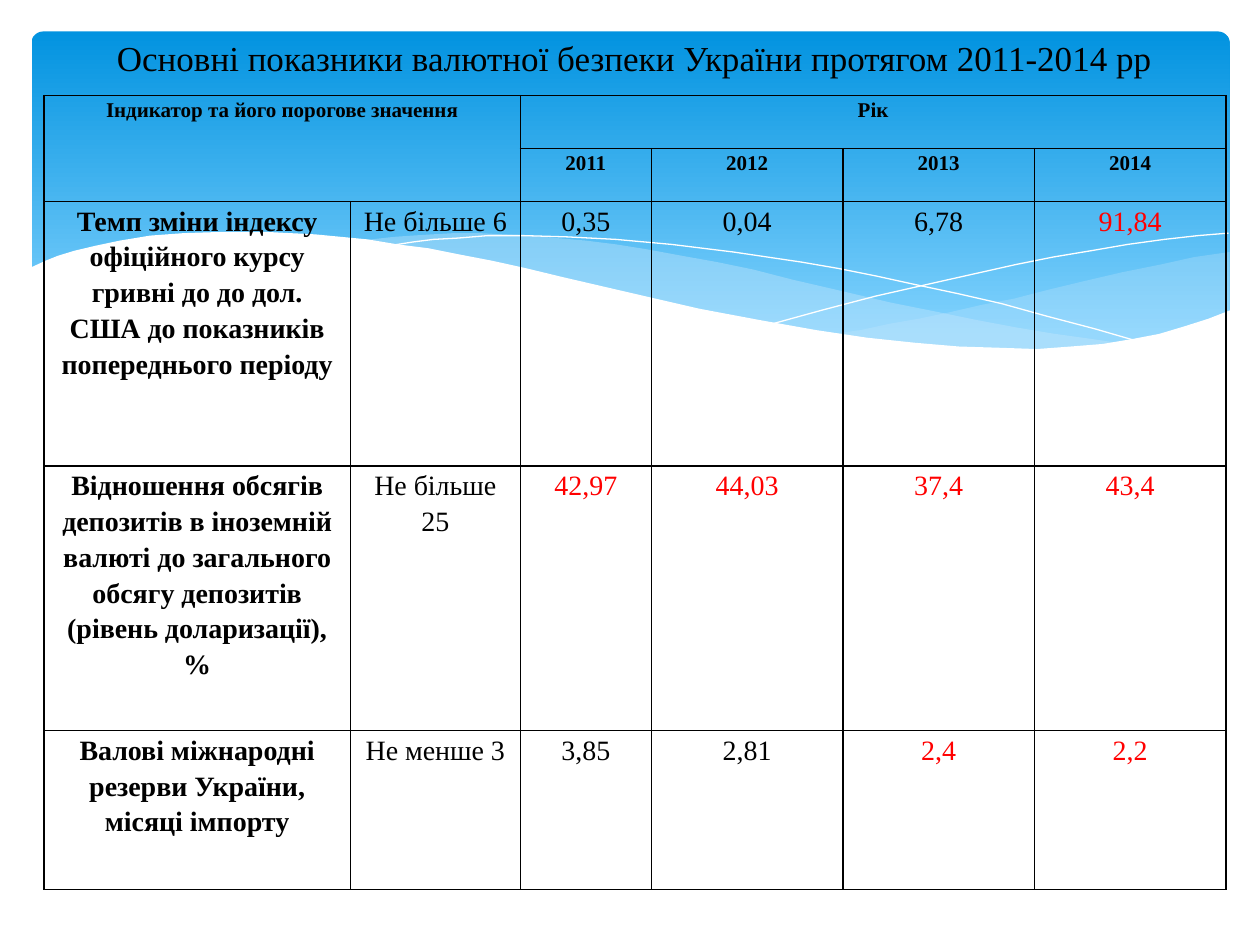
from dataclasses import dataclass

from lxml import etree
from pptx import Presentation
from pptx.dml.color import RGBColor
from pptx.enum.shapes import MSO_SHAPE
from pptx.enum.text import MSO_ANCHOR, PP_ALIGN
from pptx.oxml.ns import qn
from pptx.util import Inches, Pt

ROUNDED = MSO_SHAPE.ROUNDED_RECTANGLE
MIDDLE = MSO_ANCHOR.MIDDLE
CENTER = PP_ALIGN.CENTER


@dataclass(frozen=True)
class Theme:
    font: str = "Times New Roman"
    black: RGBColor = RGBColor(0, 0, 0)
    red: RGBColor = RGBColor(0xFF, 0, 0)
    white: RGBColor = RGBColor(0xFF, 0xFF, 0xFF)
    sky_top: RGBColor = RGBColor(0x02, 0x93, 0xE0)
    sky_bottom: RGBColor = RGBColor(0x83, 0xD3, 0xFE)
    mist: RGBColor = RGBColor(0xC6, 0xE7, 0xFC)
    title_size: int = 20
    head_size: int = 12
    body_size: int = 16


THEME = Theme()


def add_span(para, text, size, color=THEME.black, bold=False):
    para.alignment = CENTER
    span = para.add_run()
    span.text = text
    span.font.name = THEME.font
    span.font.size = Pt(size)
    span.font.bold = bold
    span.font.color.rgb = color


def add_curve(page, points, closed):
    corners = [(Inches(x), Inches(y)) for x, y in points]
    builder = page.shapes.build_freeform(*corners[0])
    builder.add_line_segments(corners[1:], close=closed)
    curve = builder.convert_to_shape()
    curve.shadow.inherit = False
    return curve


deck = Presentation()
deck.slide_width, deck.slide_height = Inches(10), Inches(7.5)
page = deck.slides.add_slide(deck.slide_layouts[6])

# Sky panel
sky = page.shapes.add_shape(ROUNDED, Inches(0.25), Inches(0.25), Inches(9.51), Inches(2.7))
sky.adjustments[0] = 0.034
sky.shadow.inherit = False
sky.line.fill.background()
sky.fill.gradient()
sky.fill.gradient_angle = 270
for stop, color, position in zip(
    sky.fill.gradient_stops, (THEME.sky_top, THEME.sky_bottom), (0, 0.9)
):
    stop.color.rgb = color
    stop.position = position

# Waves: outline and opacity in percent
right_wave = [
    (9.76, 2), (9.48, 2.04), (9.21, 2.1), (8.91, 2.16), (8.61, 2.23), (8.32, 2.3),
    (8.05, 2.37), (7.79, 2.42), (7.53, 2.48), (7.29, 2.53), (7.06, 2.57), (6.83, 2.62),
    (6.61, 2.65), (6.91, 2.69), (7.19, 2.72), (7.45, 2.75), (7.69, 2.77), (8.03, 2.78),
    (8.35, 2.77), (8.63, 2.75), (8.89, 2.72), (9.13, 2.67), (9.35, 2.62), (9.49, 2.57),
    (9.63, 2.52), (9.76, 2.47),
]
middle_wave = [
    (8.93, 2.73), (8.66, 2.69), (8.37, 2.65), (8.07, 2.6), (7.75, 2.54), (7.41, 2.47),
    (7.06, 2.4), (6.68, 2.31), (6.29, 2.22), (5.98, 2.14), (5.69, 2.08), (5.41, 2.03),
    (5.14, 1.98), (4.89, 1.94), (4.65, 1.91), (4.42, 1.89), (4.2, 1.87), (3.99, 1.86),
    (3.8, 1.85), (3.61, 1.85), (3.44, 1.86), (3.28, 1.87), (3.13, 1.88), (2.86, 1.91),
    (3.23, 1.96), (3.62, 2.03), (4.04, 2.11), (4.49, 2.22), (4.91, 2.32), (5.3, 2.4),
    (5.66, 2.48), (6.01, 2.55), (6.34, 2.61), (6.65, 2.66), (6.95, 2.7), (7.22, 2.74),
    (7.48, 2.76), (7.73, 2.77), (7.96, 2.78), (8.28, 2.78), (8.57, 2.77), (8.76, 2.75),
]
white_wave = [
    (9.77, 2.46), (9.59, 2.53), (9.4, 2.59), (9.2, 2.65), (8.99, 2.69), (8.75, 2.73),
    (8.5, 2.75), (8.23, 2.77), (7.93, 2.76), (7.61, 2.75), (7.26, 2.72), (6.88, 2.68),
    (6.48, 2.62), (6.03, 2.54), (5.55, 2.45), (5.03, 2.33), (4.47, 2.2), (4.18, 2.13),
    (3.91, 2.07), (3.65, 2.02), (3.4, 1.97), (3.16, 1.94), (2.92, 1.9), (2.71, 1.88),
    (2.5, 1.86), (2.3, 1.85), (2.11, 1.84), (1.77, 1.84), (1.46, 1.85), (1.19, 1.87),
    (0.95, 1.91), (0.76, 1.95), (0.59, 1.99), (0.46, 2.03), (0.36, 2.07), (0.23, 2.13),
    (0.23, 3.29), (9.77, 3.29),
]
falling_line = [
    (3.09, 1.95), (3.28, 1.92), (3.44, 1.9), (3.63, 1.89), (3.87, 1.87), (4.16, 1.87),
    (4.5, 1.88), (4.89, 1.9), (5.33, 1.94), (5.82, 2), (6.36, 2.08), (6.65, 2.13),
    (6.95, 2.19), (7.27, 2.26), (7.6, 2.33), (7.95, 2.41), (8.31, 2.51), (8.69, 2.61),
    (9.07, 2.72),
]
rising_line = [
    (6.13, 2.57), (6.53, 2.46), (6.95, 2.35), (7.48, 2.23), (8.06, 2.1), (8.36, 2.04),
    (8.66, 1.99), (8.95, 1.94), (9.24, 1.9), (9.51, 1.87), (9.75, 1.85),
]

for outline, opacity in ((right_wave, 29), (middle_wave, 40)):
    wave = add_curve(page, outline, True)
    wave.line.fill.background()
    wave.fill.solid()
    wave.fill.fore_color.rgb = THEME.mist
    tint = wave.fill._xPr.find(qn("a:solidFill"))[0]
    etree.SubElement(tint, qn("a:alpha"), val=str(opacity * 1000))

for points in (falling_line, rising_line):
    curve = add_curve(page, points, False)
    curve.fill.background()
    curve.line.color.rgb = THEME.white
    curve.line.width = Pt(0)

wave = add_curve(page, white_wave, True)
wave.line.fill.background()
wave.fill.solid()
wave.fill.fore_color.rgb = THEME.white

# Indicator table: values outside their threshold are red
column_widths = (2.43, 1.35, 1.04, 1.52, 1.52, 1.52)
row_heights = (0.42, 0.42, 2.1, 2.1, 1.26)
rows = [
    ("Індикатор та його порогове значення", "", "Рік", "", "", ""),
    ("", "", "2011", "2012", "2013", "2014"),
    ("Темп зміни індексу офіційного курсу гривні до до дол. США до показників "
     "попереднього періоду", "Не більше 6", "0,35", "0,04", "6,78", "91,84"),
    ("Відношення обсягів депозитів в іноземній валюті до загального обсягу депозитів "
     "(рівень доларизації), %", "Не більше 25", "42,97", "44,03", "37,4", "43,4"),
    ("Валові міжнародні резерви України, місяці імпорту",
     "Не менше 3", "3,85", "2,81", "2,4", "2,2"),
]
red_cells = {(2, 5), (3, 2), (3, 3), (3, 4), (3, 5), (4, 4), (4, 5)}

frame = page.shapes.add_table(
    len(rows), len(column_widths), Inches(0.35), Inches(0.76), Inches(9.37), Inches(6.3)
)
table = frame.table
table.first_row = table.horz_banding = False
for column, width in zip(table.columns, column_widths):
    column.width = Inches(width)
for row, height in zip(table.rows, row_heights):
    row.height = Inches(height)
table.cell(0, 0).merge(table.cell(1, 1))
table.cell(0, 2).merge(table.cell(0, 5))

for r, texts in enumerate(rows):
    for c, text in enumerate(texts):
        cell = table.cell(r, c)
        cell.margin_left = cell.margin_right = Inches(0.07)
        cell.margin_top = cell.margin_bottom = 0
        if text:
            para = cell.text_frame.paragraphs[0]
            para.line_spacing = 1.15
            add_span(
                para, text,
                THEME.head_size if r < 2 else THEME.body_size,
                THEME.red if (r, c) in red_cells else THEME.black,
                r < 2 or c == 0,
            )
        properties = cell._tc.get_or_add_tcPr()
        for side in ("a:lnL", "a:lnR", "a:lnT", "a:lnB"):
            border = etree.SubElement(properties, qn(side), w=str(Pt(1)))
            paint = etree.SubElement(border, qn("a:solidFill"))
            etree.SubElement(paint, qn("a:srgbClr"), val=str(THEME.black))
        cell.fill.background()

# Title
box = page.shapes.add_textbox(Inches(0.35), Inches(-0.1), Inches(9.37), Inches(1.08))
title = box.text_frame
title.word_wrap = True
title.vertical_anchor = MIDDLE
title.margin_bottom = Inches(0.02)
add_span(
    title.paragraphs[0],
    "Основні показники валютної безпеки України протягом 2011-2014 рр",
    THEME.title_size,
)

deck.save("out.pptx")
